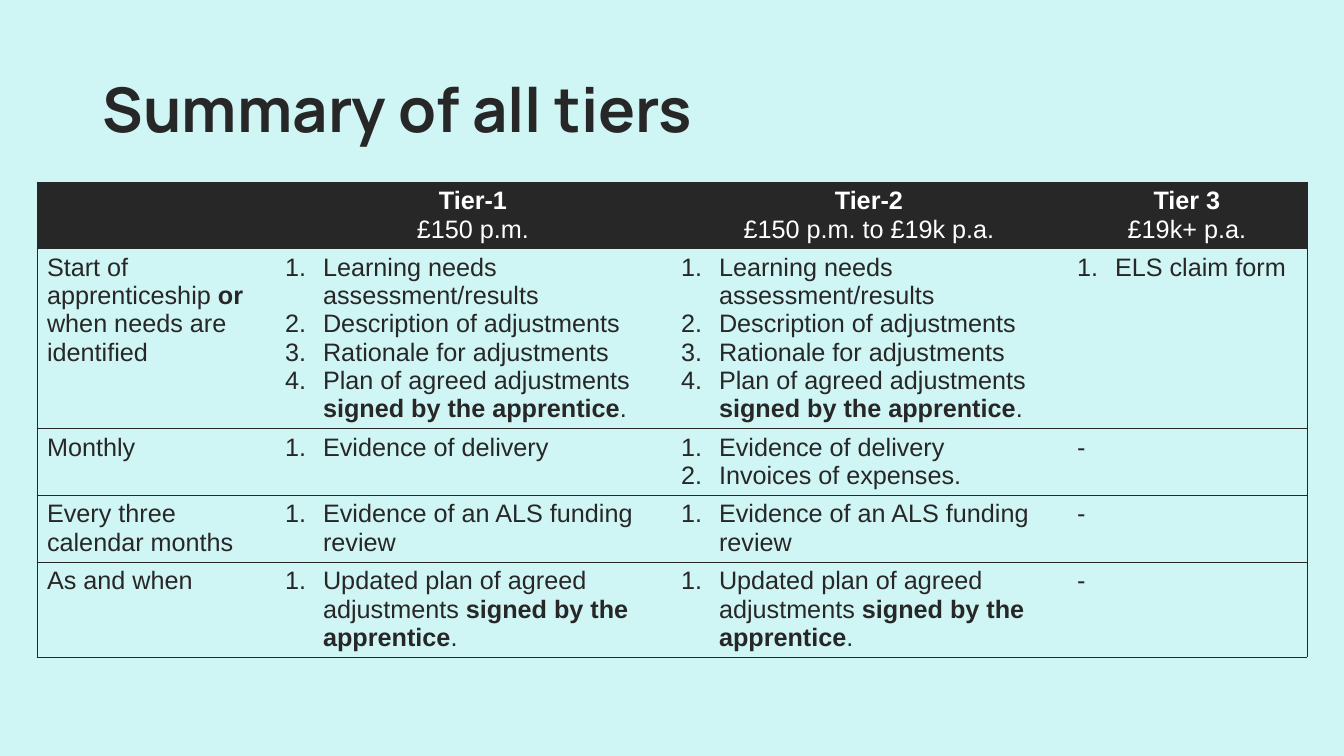
from lxml.etree import SubElement
from pptx import Presentation
from pptx.dml.color import RGBColor
from pptx.enum.text import MSO_ANCHOR, PP_ALIGN
from pptx.oxml.ns import qn
from pptx.util import Emu, Pt

INK, WHITE, PALE = "282727", "FFFFFF", "CFF5F4"
NO_STYLE = "{2D5ABB26-0587-4C30-8999-92F81FD0307C}"
COLUMN_WIDTHS = [238, 396, 396, 240]
ROW_HEIGHTS = [66, 180, 66, 67, 95]
NEEDS = [
    "Learning needs assessment/results",
    "Description of adjustments",
    "Rationale for adjustments",
    "Plan of agreed adjustments *signed by the apprentice*.",
]
REVIEW = ["Evidence of an ALS funding review"]
UPDATE = ["Updated plan of agreed adjustments *signed by the apprentice*."]
TIERS = [
    [[], ["*Tier-1*", "£150 p.m."], ["*Tier-2*", "£150 p.m. to £19k p.a."],
     ["*Tier 3*", "£19k+ p.a."]],
    [["Start of apprenticeship *or* when needs are identified"], NEEDS, NEEDS,
     ["ELS claim form"]],
    [["Monthly"], ["Evidence of delivery"],
     ["Evidence of delivery", "Invoices of expenses."], ["-"]],
    [["Every three calendar months"], REVIEW, REVIEW, ["-"]],
    [["As and when"], UPDATE, UPDATE, ["-"]],
]


def px(length):
    return Emu(round(length * 914400 / 100.8))


def color(value):
    return RGBColor.from_string(value)


def style(font, name, size, ink):
    font.name = name
    font.size = Pt(size)
    font.color.rgb = color(ink)


def add_number(paragraph):
    properties = paragraph._p.get_or_add_pPr()
    properties.set("marL", str(px(38)))
    properties.set("indent", str(-px(38)))
    SubElement(properties, qn("a:buFont"), typeface="+mj-lt")
    SubElement(properties, qn("a:buAutoNum"), type="arabicPeriod")


def write_lines(frame, lines, ink, align, numbered):
    for index, line in enumerate(lines):
        paragraph = frame.paragraphs[0] if index == 0 else frame.add_paragraph()
        paragraph.alignment = align
        if numbered:
            add_number(paragraph)
        style(paragraph.font, "Arial", 18, ink)
        for part, words in enumerate(line.split("*")):
            if words:
                run = paragraph.add_run()
                run.text = words
                if part % 2:
                    run.font.bold = True


def add_borders(cell, sides):
    properties = cell._tc.get_or_add_tcPr()
    for position, side in enumerate(sides):
        border = SubElement(properties, qn(f"a:ln{side}"), w=str(Pt(0.5)))
        fill = SubElement(border, qn("a:solidFill"))
        SubElement(fill, qn("a:srgbClr"), val=INK)
        properties.insert(position, border)


def add_tiers(slide, left, top):
    table = slide.shapes.add_table(
        len(ROW_HEIGHTS), len(COLUMN_WIDTHS), px(left), px(top),
        px(sum(COLUMN_WIDTHS)), px(sum(ROW_HEIGHTS))).table
    table.horz_banding = False
    table._tbl.tblPr.find(qn("a:tableStyleId")).text = NO_STYLE
    for column, width in zip(table.columns, COLUMN_WIDTHS):
        column.width = px(width)
    last = len(COLUMN_WIDTHS) - 1
    for r, (height, entries) in enumerate(zip(ROW_HEIGHTS, TIERS)):
        table.rows[r].height = px(height)
        header = r == 0
        for c, lines in enumerate(entries):
            cell = table.cell(r, c)
            if header:
                cell.fill.solid()
                cell.fill.fore_color.rgb = color(INK)
                cell.vertical_anchor = MSO_ANCHOR.MIDDLE
            else:
                cell.fill.background()
            add_borders(cell, "L" * (c == 0) + "R" * (c == last) + "TB")
            write_lines(cell.text_frame, lines, WHITE if header else INK,
                        PP_ALIGN.CENTER if header else PP_ALIGN.LEFT,
                        not header and c > 0 and lines != ["-"])


def add_title(slide, left, top, width, height):
    frame = slide.shapes.add_textbox(
        px(left), px(top), px(width), px(height)).text_frame
    frame.word_wrap = True
    frame.vertical_anchor = MSO_ANCHOR.MIDDLE
    title = frame.paragraphs[0]
    title.text = "Summary of all tiers"
    title.line_spacing = 0.9
    style(title.font, "Manrope", 44, INK)
    title.font.bold = True


def main():
    deck = Presentation()
    deck.slide_width, deck.slide_height = px(1344), px(756)
    slide = deck.slides.add_slide(deck.slide_layouts[6])
    slide.background.fill.solid()
    slide.background.fill.fore_color.rgb = color(PALE)
    add_tiers(slide, 37, 182)
    add_title(slide, 93, 40, 1159, 146)
    deck.save("out.pptx")


if __name__ == "__main__":
    main()
